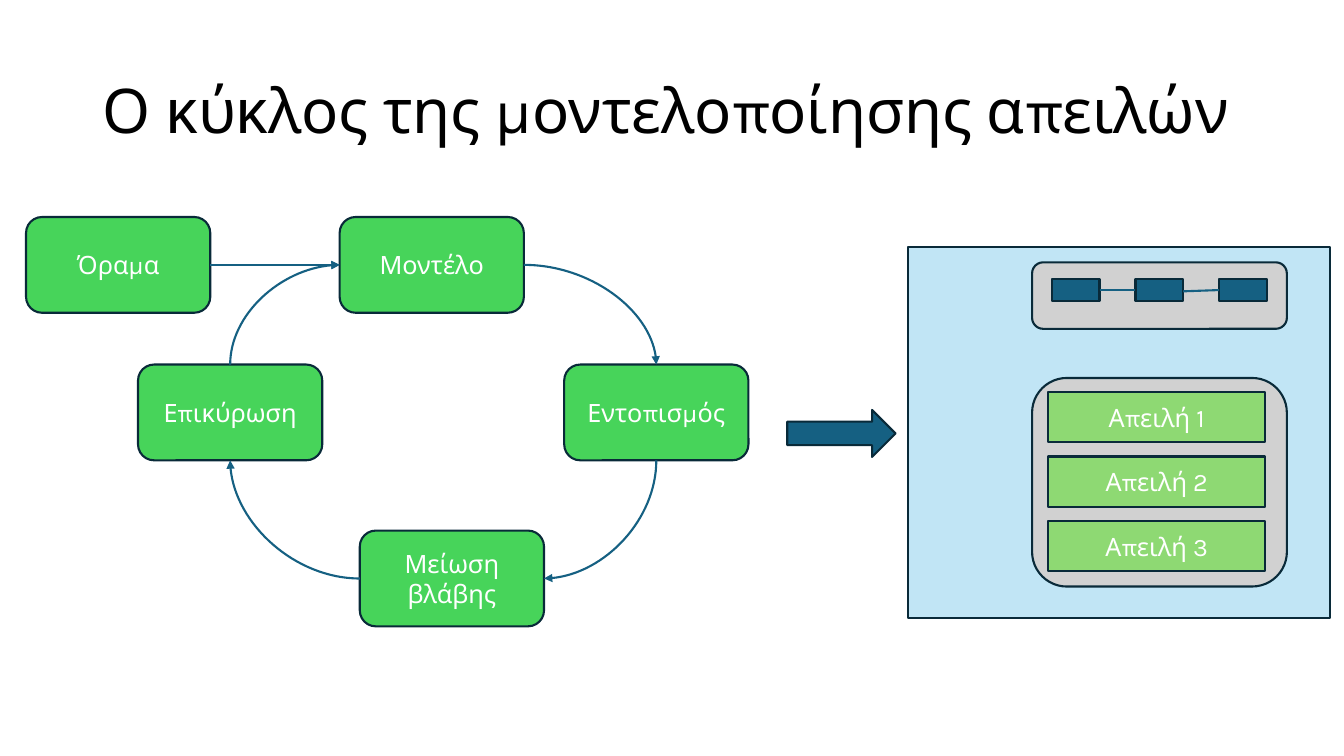
import pptx
import pptx.dml.color
import pptx.enum.shapes
import pptx.enum.text
import pptx.oxml
import pptx.oxml.ns
import pptx.util

Pt = pptx.util.Pt
RGBColor = pptx.dml.color.RGBColor
Shape = pptx.enum.shapes.MSO_SHAPE
Connector = pptx.enum.shapes.MSO_CONNECTOR
Align = pptx.enum.text.PP_ALIGN
Anchor = pptx.enum.text.MSO_ANCHOR

FONT = "Karla"
BLACK = RGBColor(0x00, 0x00, 0x00)
WHITE = RGBColor(0xFF, 0xFF, 0xFF)
OUTLINE = RGBColor(0x09, 0x2A, 0x39)
TEAL = RGBColor(0x15, 0x60, 0x82)
GREEN = RGBColor(0x47, 0xD4, 0x5A)
LIGHT_GREEN = RGBColor(0x8E, 0xD9, 0x73)
PALE_BLUE = RGBColor(0xC1, 0xE5, 0xF5)
GREY = RGBColor(0xD1, 0xD1, 0xD1)

TOP, LEFT, BOTTOM, RIGHT = range(4)
STEP_SIZE = (131.6, 68.4)


def write_text(shape, text, size, color, alignment):
    frame = shape.text_frame
    frame.word_wrap = True
    frame.vertical_anchor = Anchor.MIDDLE
    paragraph = frame.paragraphs[0]
    paragraph.alignment = alignment
    run = paragraph.add_run()
    run.text = text
    run.font.name = FONT
    run.font.size = Pt(size)
    run.font.color.rgb = color
    return paragraph


def add_title(slide, text):
    title = slide.shapes.title
    title.left, title.top, title.width, title.height = Pt(66), Pt(28.8), Pt(828), Pt(104.4)
    paragraph = write_text(title, text, 44, BLACK, Align.LEFT)
    paragraph.line_spacing = 0.9


def add_box(slide, kind, left, top, width, height, fill, text=None):
    shape = slide.shapes.add_shape(kind, Pt(left), Pt(top), Pt(width), Pt(height))
    shape.shadow.inherit = False
    shape.fill.solid()
    shape.fill.fore_color.rgb = fill
    shape.line.color.rgb = OUTLINE
    shape.line.width = Pt(1.5)
    if text:
        write_text(shape, text, 18, WHITE, Align.CENTER)
    return shape


def add_link(slide, kind, start, start_side, end, end_side, arrow=True):
    link = slide.shapes.add_connector(kind, 0, 0, 0, 0)
    link.begin_connect(start, start_side)
    link.end_connect(end, end_side)
    link.line.color.rgb = TEAL
    link.line.width = Pt(1.5)
    if arrow:
        tail = pptx.oxml.parse_xml(
            f'<a:tailEnd {pptx.oxml.ns.nsdecls("a")} type="triangle"/>')
        link.line._get_or_add_ln().append(tail)
    properties = link._element.spPr
    properties.append(pptx.oxml.parse_xml(f'<a:effectLst {pptx.oxml.ns.nsdecls("a")}/>'))
    return link


def add_bend(slide, start, start_side, end, end_side, quarter_turns):
    link = add_link(slide, Connector.CURVE, start, start_side, end, end_side)
    center_x = (link.begin_x + link.end_x) // 2
    center_y = (link.begin_y + link.end_y) // 2
    width, height = link.width, link.height
    if quarter_turns % 2:
        width, height = height, width
    link.left, link.top = center_x - width // 2, center_y - height // 2
    link.width, link.height = width, height
    properties = link._element.spPr
    frame = properties.find(pptx.oxml.ns.qn("a:xfrm"))
    frame.flipH = frame.flipV = False
    frame.set("rot", str(quarter_turns * 90 * 60000))
    properties.find(pptx.oxml.ns.qn("a:prstGeom")).set("prst", "curvedConnector2")


def add_cycle(slide):
    def add_step(left, top, text):
        return add_box(slide, Shape.ROUNDED_RECTANGLE, left, top, *STEP_SIZE, GREEN, text)

    vision = add_step(18.6, 155, "Όραμα")
    model = add_step(242.6, 155, "Μοντέλο")
    detection = add_step(403, 260.4, "Εντοπισμός")
    mitigation = add_step(257, 379, "Μείωση βλάβης")
    validation = add_step(98.6, 260.4, "Επικύρωση")

    add_link(slide, Connector.STRAIGHT, vision, RIGHT, model, LEFT)
    bends = [
        (model, RIGHT, detection, TOP),
        (detection, BOTTOM, mitigation, RIGHT),
        (mitigation, LEFT, validation, BOTTOM),
        (validation, TOP, model, LEFT),
    ]
    for quarter_turns, bend in enumerate(bends):
        add_bend(slide, *bend, quarter_turns)


def add_threats(slide):
    panel = add_box(slide, Shape.ROUNDED_RECTANGLE, 737.2, 270, 182, 149, GREY)
    panel.adjustments[0] = 0.1667
    for index in range(3):
        add_box(slide, Shape.RECTANGLE, 748.8, 280 + 46.1 * index, 154.8, 36,
                LIGHT_GREEN, f"Απειλή {index + 1}")


def add_diagram(slide):
    add_box(slide, Shape.ROUNDED_RECTANGLE, 737.2, 187.4, 182, 47.5, GREY)
    blocks = [
        add_box(slide, Shape.RECTANGLE, 751.4 + 59.7 * index, 199.2, 34, 16, TEAL)
        for index in range(3)
    ]
    for start, end in zip(blocks, blocks[1:]):
        link = add_link(slide, Connector.STRAIGHT, start, RIGHT, end, LEFT, arrow=False)
    link.begin_y += Pt(0.9)


def main():
    presentation = pptx.Presentation()
    presentation.slide_width, presentation.slide_height = Pt(960), Pt(540)
    slide = presentation.slides.add_slide(presentation.slide_layouts[5])
    add_box(slide, Shape.RECTANGLE, 648.6, 176.4, 301.6, 265.2, PALE_BLUE)
    add_title(slide, "Ο κύκλος της μοντελοποίησης απειλών")
    add_cycle(slide)
    add_threats(slide)
    add_diagram(slide)
    add_box(slide, Shape.RIGHT_ARROW, 562.3, 292.8, 77.4, 33.6, TEAL)
    presentation.save("out.pptx")


if __name__ == "__main__":
    main()
